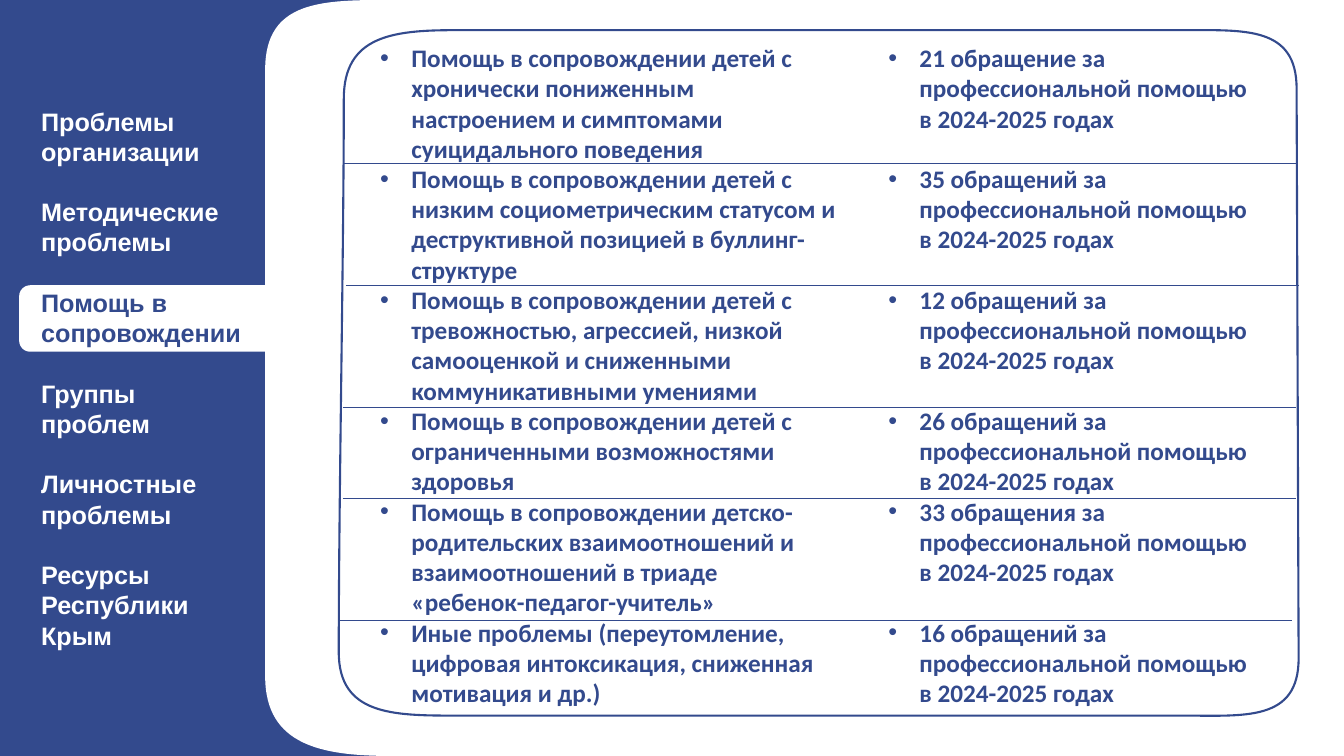
from dataclasses import dataclass
from itertools import accumulate

from lxml.etree import SubElement
from pptx import Presentation
from pptx.dml.color import RGBColor
from pptx.enum.shapes import MSO_CONNECTOR, MSO_SHAPE
from pptx.enum.text import MSO_ANCHOR, MSO_AUTO_SIZE, PP_ALIGN
from pptx.oxml.ns import qn
from pptx.shapes.autoshape import Shape
from pptx.shapes.placeholder import SlidePlaceholder
from pptx.slide import Slide
from pptx.text.text import _Paragraph as Paragraph
from pptx.util import Inches, Pt

Point = tuple[float, float]


@dataclass(frozen=True)
class Theme:
    blue: RGBColor = RGBColor(0x33, 0x4A, 0x8D)
    white: RGBColor = RGBColor(0xFF, 0xFF, 0xFF)
    menu_font: str = "Arial"
    list_font: str = "Calibri"
    text_size: Pt = Pt(18)
    line_pitch: Pt = Pt(21.6)
    frame_width: Pt = Pt(1.5)
    divider_width: Pt = Pt(0.75)


@dataclass(frozen=True)
class Box:
    left: float
    top: float
    width: float
    height: float

    def lengths(self) -> list[Inches]:
        return [Inches(value) for value in (self.left, self.top, self.width, self.height)]


@dataclass(frozen=True)
class HelpRow:
    topic: str
    requests: str
    lines: int

    @property
    def height(self) -> float:
        return self.lines * 0.3 + 0.01


THEME = Theme()
MENU = [
    "Проблемы организации",
    "Методические проблемы",
    "Помощь в сопровождении",
    "Группы проблем",
    "Личностные проблемы",
    "Ресурсы Республики Крым",
]
ACTIVE_ITEM = "Помощь в сопровождении"
ROWS = [
    HelpRow("Помощь в сопровождении детей с хронически пониженным настроением "
            "и симптомами суицидального поведения", "21 обращение", 4),
    HelpRow("Помощь в сопровождении детей с низким социометрическим статусом "
            "и деструктивной позицией в буллинг-структуре", "35 обращений", 4),
    HelpRow("Помощь в сопровождении детей с тревожностью, агрессией, низкой "
            "самооценкой и сниженными коммуникативными умениями", "12 обращений", 4),
    HelpRow("Помощь в сопровождении детей с ограниченными возможностями здоровья",
            "26 обращений", 3),
    HelpRow("Помощь в сопровождении детско-родительских взаимоотношений "
            "и взаимоотношений в триаде «ребенок-педагог-учитель»", "33 обращения", 4),
    HelpRow("Иные проблемы (переутомление, цифровая интоксикация, сниженная "
            "мотивация и др.)", "16 обращений", 3),
]
REQUEST_LINES = 3
FIRST_ROW_TOP = 0.41
DIVIDER_LEFTS = [3.4, 3.43, 3.4, 3.4, 3.36]
DIVIDER_LENGTH = 9.45

# Each segment holds one end point, or two control points and an end point.
PANEL_OUTLINE = [
    [(2.63, 0.69)],
    [(2.63, 0), (3.2, 0), (3.89, 0)],
    [(13.33, 0)],
    [(14.02, 0), (14.58, 0.56), (14.58, 1.25)],
    [(14.58, 6.25)],
    [(14.58, 6.94), (14.02, 7.5), (13.33, 7.5)],
    [(3.89, 7.5)],
    [(3.2, 7.5), (2.63, 7.4), (2.63, 6.71)],
]
FRAME_OUTLINE = [
    [(3.41, 0.98)],
    [(3.41, 0.36), (3.89, 0.3), (4.51, 0.3)],
    [(11.73, 0.3)],
    [(12.35, 0.3), (12.86, 0.26), (12.86, 0.88)],
    [(12.88, 6.53)],
    [(12.88, 7.16), (12.35, 7.1), (11.73, 7.1)],
    [(4.51, 7.1)],
    [(3.89, 7.1), (3.36, 7.09), (3.36, 6.47)],
    [(3.36, 4.96), (3.41, 2.49), (3.41, 0.98)],
]


def add_outline(slide: Slide, outline: list[list[Point]]) -> Shape:
    """Add a white closed freeform whose three-point segments are Bezier curves."""
    corners = [(Inches(x), Inches(y)) for segment in outline for x, y in segment]
    builder = slide.shapes.build_freeform(*corners[0])
    builder.add_line_segments(corners[1:], close=True)
    shape = builder.convert_to_shape()
    lines = iter(list(shape.element.iter(qn("a:lnTo"))))
    for segment in outline[1:]:
        first, *others = [next(lines) for _ in segment]
        if others:
            first.tag = qn("a:cubicBezTo")
        for other in others:
            first.append(other[0])
            other.getparent().remove(other)
    shape.shadow.inherit = False
    shape.fill.solid()
    shape.fill.fore_color.rgb = THEME.white
    shape.line.fill.background()
    return shape


def add_rounded_box(slide: Slide, box: Box) -> Shape:
    shape = slide.shapes.add_shape(MSO_SHAPE.ROUNDED_RECTANGLE, *box.lengths())
    shape.shadow.inherit = False
    shape.fill.background()
    shape.line.fill.background()
    return shape


def format_paragraph(paragraph: Paragraph, font_name: str, color: RGBColor) -> None:
    paragraph.alignment = PP_ALIGN.LEFT
    paragraph.line_spacing = THEME.line_pitch
    paragraph.space_before = Pt(0)
    paragraph.font.name = font_name
    paragraph.font.size = THEME.text_size
    paragraph.font.bold = True
    paragraph.font.color.rgb = color


def add_menu(slide: Slide) -> None:
    tab = add_rounded_box(slide, Box(0.19, 2.83, 2.73, 0.66))
    tab.fill.solid()
    tab.fill.fore_color.rgb = THEME.white
    frame = add_rounded_box(slide, Box(0.19, 1.47, 2.45, 4.56)).text_frame
    frame.word_wrap = True
    frame.vertical_anchor = MSO_ANCHOR.MIDDLE
    frame.text = "\n".join(MENU)
    for item, paragraph in zip(MENU, frame.paragraphs):
        color = THEME.blue if item == ACTIVE_ITEM else THEME.white
        format_paragraph(paragraph, THEME.menu_font, color)
        if item != MENU[0]:
            paragraph.space_before = THEME.line_pitch


def fill_list(placeholder: SlidePlaceholder, box: Box, items: list[str],
              blank_lines: list[int]) -> None:
    """Move the placeholder to the front and fill it with a bulleted list."""
    placeholder.left, placeholder.top, placeholder.width, placeholder.height = box.lengths()
    placeholder.element.getparent().append(placeholder.element)
    frame = placeholder.text_frame
    frame.auto_size = MSO_AUTO_SIZE.NONE
    frame.word_wrap = True
    frame.vertical_anchor = MSO_ANCHOR.TOP
    frame.text = "\n".join(items)
    for paragraph, blank in zip(frame.paragraphs, blank_lines):
        format_paragraph(paragraph, THEME.list_font, THEME.blue)
        paragraph.space_after = Pt(blank * THEME.line_pitch.pt)
        properties = paragraph._p.get_or_add_pPr()
        properties.set("marL", str(Inches(0.31)))
        properties.set("indent", str(Inches(-0.31)))


def add_divider(slide: Slide, left: float, top: float) -> None:
    line = slide.shapes.add_connector(
        MSO_CONNECTOR.STRAIGHT, Inches(left), Inches(top),
        Inches(left + DIVIDER_LENGTH), Inches(top))
    line.line.color.rgb = THEME.blue
    line.line.width = THEME.divider_width
    SubElement(line.element.spPr, qn("a:effectLst"))


def main() -> None:
    presentation = Presentation()
    presentation.slide_width, presentation.slide_height = Inches(13.33), Inches(7.5)
    slide = presentation.slides.add_slide(presentation.slide_layouts.get_by_name("Two Content"))
    slide.background.fill.solid()
    slide.background.fill.fore_color.rgb = THEME.blue
    title, topics, requests = slide.placeholders
    title.element.getparent().remove(title.element)

    add_outline(slide, PANEL_OUTLINE)
    frame = add_outline(slide, FRAME_OUTLINE)
    frame.line.color.rgb = THEME.blue
    frame.line.width = THEME.frame_width
    add_menu(slide)

    fill_list(topics, Box(3.67, 0.37, 4.73, 6.77), [row.topic for row in ROWS], [0] * len(ROWS))
    fill_list(requests, Box(8.71, 0.37, 3.9, 6.77),
              [f"{row.requests} за профессиональной помощью в 2024-2025 годах" for row in ROWS],
              [row.lines - REQUEST_LINES for row in ROWS])
    row_bottoms = accumulate((row.height for row in ROWS), initial=FIRST_ROW_TOP)
    for left, top in zip(DIVIDER_LEFTS, list(row_bottoms)[1:]):
        add_divider(slide, left, top)
    presentation.save("out.pptx")


if __name__ == "__main__":
    main()
